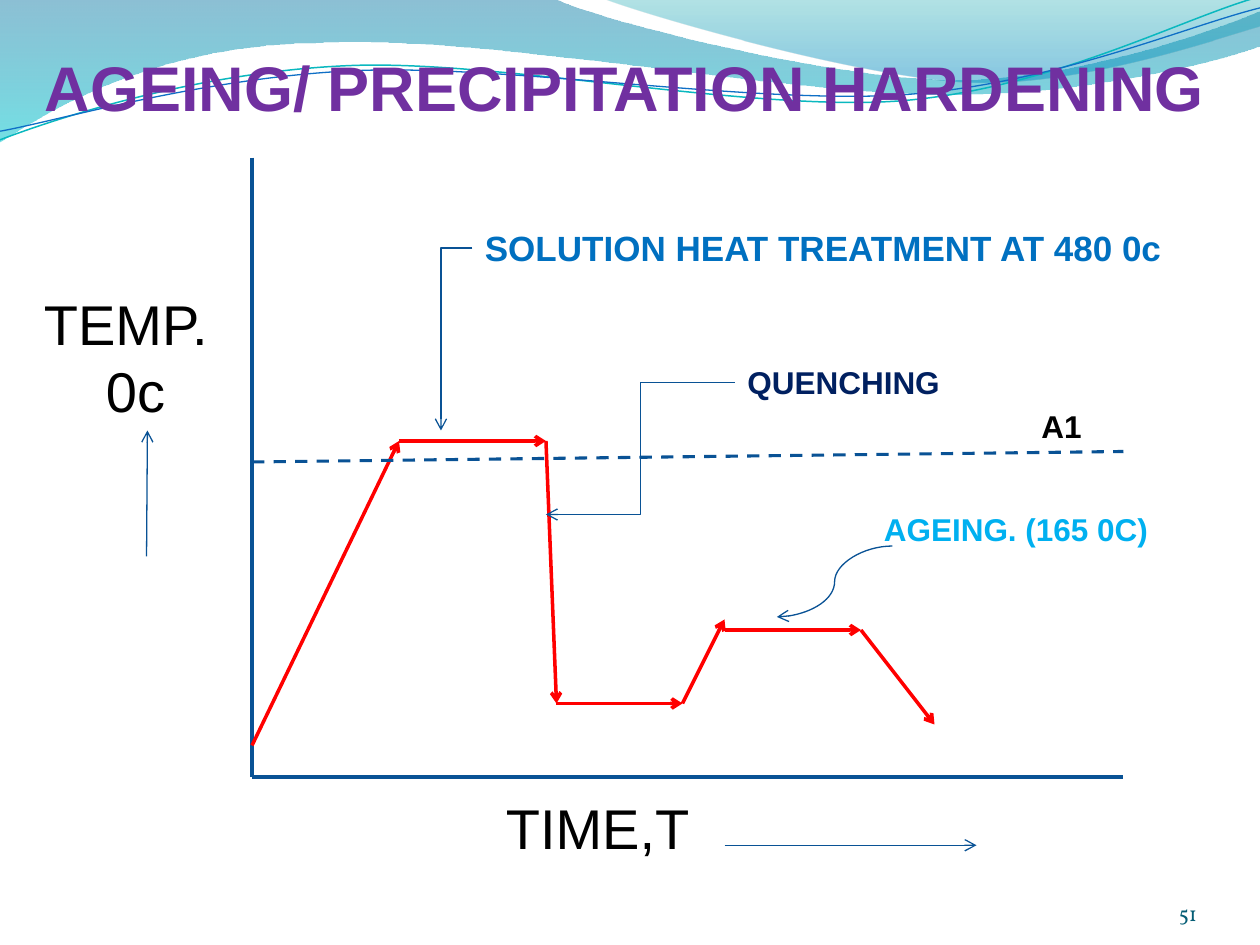
from itertools import pairwise

from lxml.etree import SubElement
from pptx import Presentation
from pptx.dml.color import RGBColor
from pptx.enum.dml import MSO_LINE
from pptx.enum.shapes import MSO_CONNECTOR
from pptx.enum.text import MSO_ANCHOR, PP_ALIGN
from pptx.oxml.ns import qn
from pptx.util import Pt

COLOURS = {
    "title": "7030A0", "axis": "095295", "cycle": "FF0000", "text": "000000",
    "solution": "0070C0", "quench": "002060", "ageing": "00B0F0", "number": "045D75",
    "teal": "0AB8BF", "blue": "0F6FC6", "broad_top": "0074A1", "broad_end": "00C6CF",
    "narrow_top": "00A1A9", "narrow_end": "008BBF",
}
AXIS_NAME = {"size": Pt(32)}
LABEL = {"size": Pt(18), "bold": True}


class SlidePainter:
    """Draws styled elements on the current slide, with lengths in points."""

    def __init__(self, page, font="Arial"):
        self.page = page
        self.font = font

    def colour(self, name):
        return RGBColor.from_string(COLOURS[name])

    def outline(self, start, steps, close):
        builder = self.page.shapes.build_freeform(*map(Pt, start), scale=1.0)
        points = [(Pt(x), Pt(y)) for step in steps for x, y in zip(step[::2], step[1::2])]
        builder.add_line_segments(points, close=close)
        shape = builder.convert_to_shape()
        shape.shadow.inherit = False
        corners = iter(list(shape._element.spPr.iter(qn("a:lnTo"))))
        for step in steps:
            first = next(corners)
            if len(step) == 6:
                first.tag = qn("a:cubicBezTo")
                for corner in (next(corners), next(corners)):
                    first.append(corner[0])
                    corner.getparent().remove(corner)
        return shape

    def band(self, start, steps, stops):
        shape = self.outline(start, steps, close=True)
        shape.fill.gradient()
        shape.fill.gradient_angle = 270
        for stop, (position, name, _) in zip(shape.fill.gradient_stops, stops):
            stop.position = position
            stop.color.rgb = self.colour(name)
        stop_colours = shape._element.spPr.iter(qn("a:srgbClr"))
        for element, (_, _, opacity) in zip(stop_colours, stops):
            SubElement(element, qn("a:alpha"), val=str(opacity * 1000))
        shape.line.fill.background()

    def ripple(self, start, steps, colour, width):
        shape = self.outline(start, steps, close=False)
        shape.rotation = 357.3
        shape.fill.background()
        shape.line.color.rgb = self.colour(colour)
        shape.line.width = Pt(width)

    def text(self, place, lines, colour, font, frame=None, align=PP_ALIGN.LEFT):
        box = self.page.shapes.add_textbox(*map(Pt, place))
        box.text_frame.word_wrap = True
        for key, value in (frame or {}).items():
            setattr(box.text_frame, key, value)
        for index, (words, indent) in enumerate(lines):
            paras = box.text_frame.paragraphs
            para = box.text_frame.add_paragraph() if index else paras[0]
            para.alignment = align
            if indent:
                para._p.get_or_add_pPr().set("marL", str(Pt(indent)))
            span = para.add_run()
            span.text = words
            span.font.color.rgb = self.colour(colour)
            for key, value in {"name": self.font, **font}.items():
                setattr(span.font, key, value)
        return box

    def line(self, start, end, colour="axis", width=0.75, arrow=True, dash=None,
             kind=MSO_CONNECTOR.STRAIGHT, preset=None, source=None):
        connector = self.page.shapes.add_connector(kind, *map(Pt, (*start, *end)))
        if source is not None:
            connector.begin_connect(source, 1)
        connector.line.color.rgb = self.colour(colour)
        connector.line.width = Pt(width)
        if dash:
            connector.line.dash_style = dash
        properties = connector._element.spPr
        if preset:
            properties.find(qn("a:prstGeom")).set("prst", preset)
        if arrow:
            SubElement(properties.find(qn("a:ln")), qn("a:tailEnd"), type="arrow")
        SubElement(properties, qn("a:effectLst"))

    def track(self, points, **style):
        for start, end in pairwise(points):
            self.line(start, end, **style)


def main():
    deck = Presentation()
    deck.slide_width, deck.slide_height = Pt(720), Pt(540)
    painter = SlidePainter(deck.slides.add_slide(deck.slide_layouts[6]))

    painter.band((0, -0.7), [
        (317, -0.7), (343, 12, 478, 45.5, 546, 45.5), (614, 45.5, 690, 19, 720, 6.5),
        (721, 26), (708, 32, 626, 55, 537, 54), (448, 54, 275, 20, 185, 24.5),
        (93, 25, 33, 60, -0.7, 81.5),
    ], [(0, "broad_top", 45), (1, "broad_end", 55)])
    painter.band((345, -0.7), [
        (366.5, 8, 491, 44.5, 553.5, 47), (616, 49.5, 692, 23, 720, 15), (720, 0),
    ], [(0, "narrow_top", 30), (0.8, "narrow_end", 45)])
    painter.ripple((-1.5, 63), [
        (33.5, 51.5, 114, 29.5, 200, 30), (285, 30.5, 426, 67, 512.5, 65),
        (599, 62.5, 676.5, 25.5, 720, 15.5),
    ], "teal", 0.85)
    painter.ripple((-1, 58), [
        (33, 53.5, 118.5, 32.5, 204, 33), (290.5, 33.5, 429, 63, 515.5, 61.5),
        (601.5, 59.5, 678.5, 30, 721.5, 21.5),
    ], "blue", 0.75)

    painter.text((0, 24, 702, 51), [("AGEING/ PRECIPITATION HARDENING", 18.5)],
                 "title", {"size": Pt(36), "bold": True})

    painter.track([(144, 90), (144, 444), (642, 444)], width=2.75, arrow=False)
    painter.text((18, 162, 114, 85), [("TEMP.", 0), ("0c", 35.5)], "text", AXIS_NAME)
    painter.line((83.75, 318), (84.25, 246))
    painter.text((282, 450, 162, 46), [("TIME,T", 0)], "text", AXIS_NAME)
    painter.line((414, 483), (558, 483))

    heating = [(144, 426), (228, 252), (312, 252), (318, 402), (390, 402), (414, 354)]
    ageing = [(414, 360), (492, 360), (534, 414)]
    for points in (heating, ageing):
        painter.track(points, colour="cycle", width=2)
    painter.line((144, 264), (642, 258), width=1.75, arrow=False, dash=MSO_LINE.DASH)

    solution = painter.text((270, 126, 426, 31.5), [("SOLUTION HEAT TREATMENT AT 480 0c", 0)],
                            "solution", {"size": Pt(20), "bold": True})
    quench = painter.text((420, 204, 234, 29), [("QUENCHING", 0)], "quench", LABEL)
    painter.text((498, 288, 186, 29), [("AGEING. (165 0C)", 0)], "ageing", LABEL)
    painter.line((270, 141.75), (252, 246), kind=MSO_CONNECTOR.ELBOW,
                 preset="bentConnector2", source=solution)
    painter.line((420, 218.5), (312, 294), kind=MSO_CONNECTOR.ELBOW, source=quench)
    painter.line((510, 312), (444, 352.5), kind=MSO_CONNECTOR.CURVE)

    bare = {"vertical_anchor": MSO_ANCHOR.BOTTOM, **dict.fromkeys(
        ("margin_left", "margin_top", "margin_right", "margin_bottom"), Pt(0))}
    painter.text((624, 500, 60, 29), [("51", 0)], "number",
                 {"name": "Vollkorn", "size": Pt(12)}, bare, PP_ALIGN.RIGHT)
    painter.text((588, 229, 48, 29), [("A1", 0)], "text", LABEL)

    deck.save("out.pptx")


if __name__ == "__main__":
    main()
